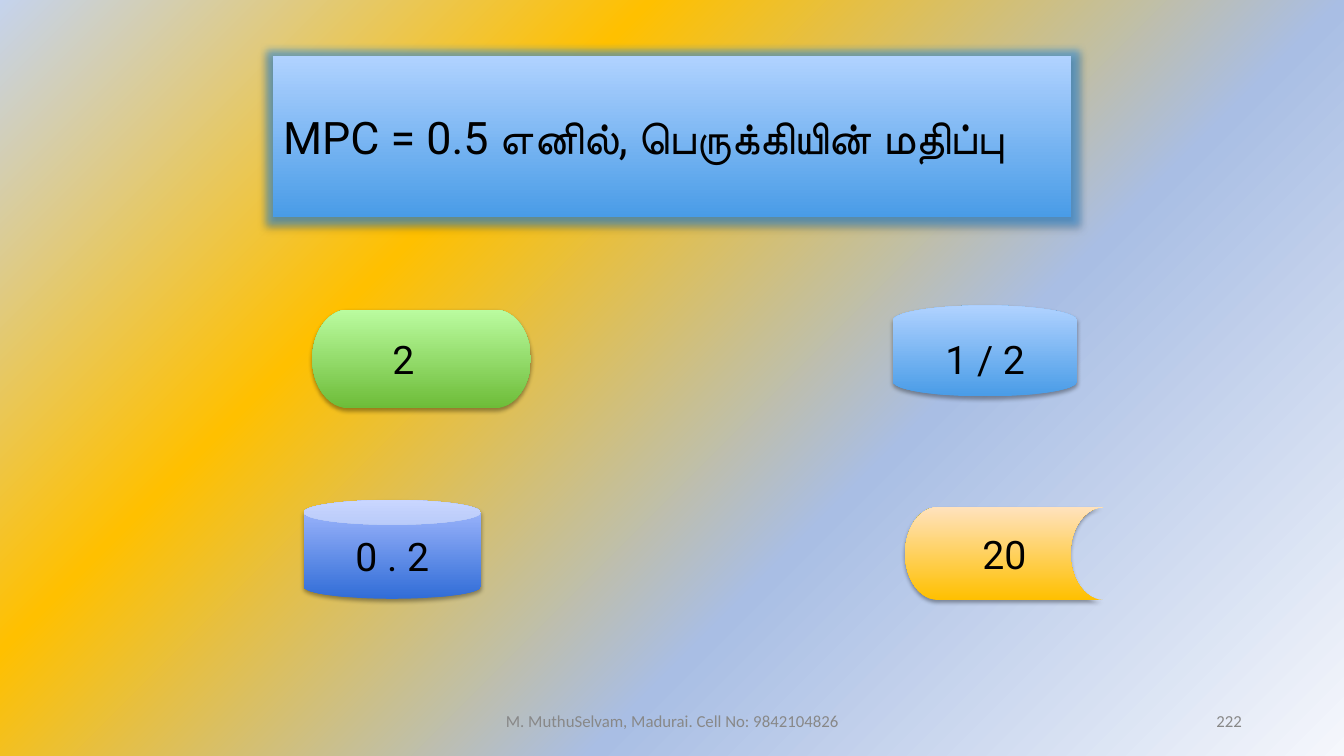
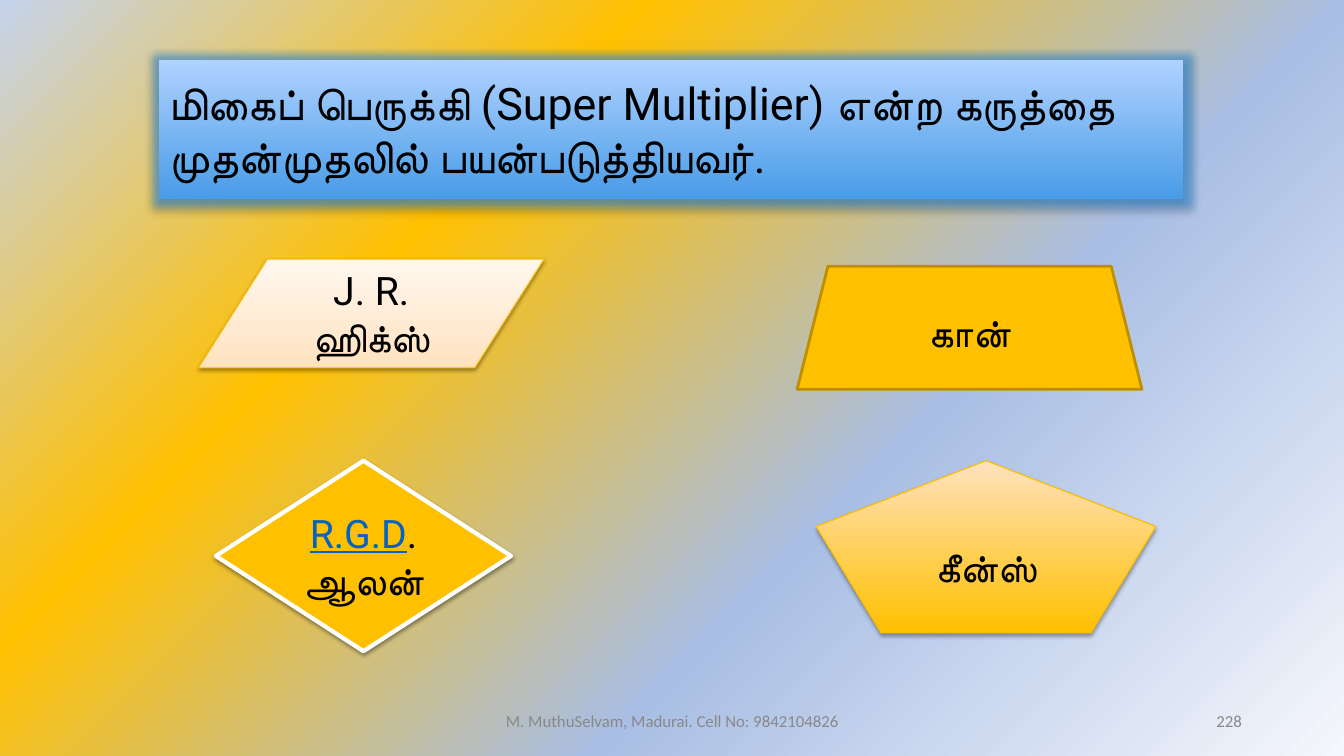
import pptx
import pptx.util
import pptx.dml.color
import pptx.enum.shapes
import pptx.enum.text
import pptx.oxml
import pptx.oxml.ns

Cm, Pt = pptx.util.Cm, pptx.util.Pt
SHAPE = pptx.enum.shapes.MSO_SHAPE
ALIGN = pptx.enum.text.PP_ALIGN
NAMESPACE = pptx.oxml.ns.nsdecls("a")
qn = pptx.oxml.ns.qn

COLORS = {
    "ink": "000000", "muted": "888888", "link": "0563C1", "white": "FFFFFF",
    "gold": "FFC000", "gold_edge": "F9BC00", "gold_dark": "BD8E00", "glow": "3E95DC",
}
GRADIENTS = {  # (position in percent, colour)
    "background": [(0, "F5F7FC"), (36, "A9BEE4"), (69, "FFC000"), (100, "C5D3ED")],
    "blue": [(0, "499CE7"), (100, "B0D2FF")],
    "green": [(0, "6DBC38"), (100, "BBFCA0")],
    "royal": [(0, "316DD7"), (100, "A6BBFF")],
    "amber": [(0, "FFC000"), (100, "FFE2BD")],
    "cream": [(0, "FFE2BD"), (35, "FFEAD1"), (100, "FFF7EE")],
}
UPWARD = '<a:lin ang="16200000" scaled="0"/>'
FROM_CORNER = '<a:path path="circle"><a:fillToRect l="100000" t="100000"/></a:path>'
SHADOWS = {  # opacity in percent, blur and distance in points
    "strong": (35, 3.1, 1.8),
    "soft": (38, 3.1, 1.6),
}
TEXT = {
    "question": {"size": Pt(32), "name": "Roboto"},
    "answer": {"size": Pt(28), "name": "Roboto"},
    "footer": {"size": Pt(12), "name": "Calibri"},
}
FOOTER = "M. MuthuSelvam, Madurai. Cell No: 9842104826"
FOOTER_BOX = (11.23, 17.65, 11.43, 1.02)
NUMBER_BOX = (23.93, 17.65, 7.62, 1.02)

# Boxes are left, top, width, height in centimetres; lines are colour and points.
SLIDES = [
    {
        "number": "222",
        "question": "MPC = 0.5 எனில், பெருக்கியின் மதிப்பு",
        "box": (6.88, 1.42, 20.12, 4.06),
        "answers": [
            {"text": "2", "kind": SHAPE.FLOWCHART_DIRECT_ACCESS_STORAGE,
             "box": (7.87, 7.8, 5.51, 2.49), "fill": "green", "shadow": "strong"},
            {"text": "1 / 2", "kind": SHAPE.FLOWCHART_MAGNETIC_DISK,
             "box": (22.5, 7.7, 4.65, 2.29), "fill": "blue", "shadow": "strong"},
            {"text": "0 . 2", "kind": SHAPE.CAN,
             "box": (7.65, 12.6, 4.47, 2.49), "fill": "royal", "shadow": "strong"},
            {"text": "20", "kind": SHAPE.FLOWCHART_STORED_DATA,
             "box": (22.81, 12.78, 5, 2.34), "fill": "amber", "shadow": "strong"},
        ],
    },
    {
        "number": "228",
        "question": "மிகைப் பெருக்கி (Super Multiplier) என்ற கருத்தை "
                    "முதன்முதலில் பயன்படுத்தியவர்.",
        "box": (4.01, 1.5, 25.81, 3.51),
        "answers": [
            {"text": "J. R. ஹிக்ஸ்", "kind": SHAPE.FLOWCHART_DATA,
             "box": (5, 6.53, 8.71, 2.74), "fill": "cream",
             "line": ("gold_edge", 0.75), "shadow": "soft"},
            {"text": "கான்", "kind": SHAPE.TRAPEZOID,
             "box": (20.09, 6.71, 8.69, 3.1), "fill": "gold", "line": ("gold_dark", 2)},
            {"linked": "R.G.D", "text": ". ஆலன்", "kind": SHAPE.DIAMOND,
             "box": (5.44, 11.61, 7.44, 4.8), "fill": "gold",
             "line": ("white", 3), "shadow": "soft"},
            {"text": "கீன்ஸ்", "kind": SHAPE.REGULAR_PENTAGON,
             "box": (20.57, 11.61, 8.56, 4.34), "fill": "amber",
             "line": ("gold_edge", 0.75), "shadow": "strong"},
        ],
    },
]


def rgb(name):
    return pptx.dml.color.RGBColor.from_string(COLORS[name])


def lengths(box):
    return [Cm(value) for value in box]


def apply_gradient(fill, properties, name, direction):
    """Fill the element that holds the shape or background properties."""
    fill.solid()
    stops = "".join(
        f'<a:gs pos="{position * 1000}"><a:srgbClr val="{color}"/></a:gs>'
        for position, color in GRADIENTS[name])
    gradient = pptx.oxml.parse_xml(
        f'<a:gradFill {NAMESPACE} rotWithShape="1"><a:gsLst>{stops}</a:gsLst>'
        f'{direction}</a:gradFill>')
    properties.replace(properties.find(qn("a:solidFill")), gradient)


def add_effect(shape, tag, attributes, color, opacity):
    effects = shape._element.spPr.find(qn("a:effectLst"))
    effects.append(pptx.oxml.parse_xml(
        f'<a:{tag} {NAMESPACE} {attributes}><a:srgbClr val="{COLORS[color]}">'
        f'<a:alpha val="{opacity * 1000}"/></a:srgbClr></a:{tag}>'))


def style_shape(shape, fill, line=None, shadow=None, glow=False):
    if fill in GRADIENTS:
        apply_gradient(shape.fill, shape._element.spPr, fill, UPWARD)
    else:
        shape.fill.solid()
        shape.fill.fore_color.rgb = rgb(fill)
    if line:
        shape.line.color.rgb, shape.line.width = rgb(line[0]), Pt(line[1])
    else:
        shape.line.fill.background()
    shape.shadow.inherit = False
    if glow:
        add_effect(shape, "glow", f'rad="{Pt(11)}"', "glow", 60)
    if shadow:
        opacity, blur, distance = SHADOWS[shadow]
        add_effect(shape, "outerShdw",
                   f'blurRad="{Pt(blur)}" dist="{Pt(distance)}" dir="5400000" '
                   'rotWithShape="0"', "ink", opacity)


def write_text(shape, text, style, alignment, color="ink", linked=""):
    frame = shape.text_frame
    frame.word_wrap = True
    frame.auto_size = pptx.enum.text.MSO_AUTO_SIZE.NONE
    frame.vertical_anchor = pptx.enum.text.MSO_ANCHOR.MIDDLE
    paragraph = frame.paragraphs[0]
    paragraph.alignment = alignment
    for content, run_color in ((linked, "link"), (text, color)):
        if content:
            run = paragraph.add_run()
            run.text = content
            for attribute, value in TEXT[style].items():
                setattr(run.font, attribute, value)
            run.font.color.rgb = rgb(run_color)
            run.font.underline = run_color == "link"


def place_question(title, text, box):
    for side, value in zip(("left", "top", "width", "height"), lengths(box)):
        setattr(title, side, value)
    title._element.spPr.append(pptx.oxml.parse_xml(
        f'<a:prstGeom {NAMESPACE} prst="horizontalScroll"><a:avLst/></a:prstGeom>'))
    style_shape(title, "blue", shadow="strong", glow=True)
    write_text(title, text, "question", ALIGN.LEFT)


def add_answer(slide, answer):
    shape = slide.shapes.add_shape(answer["kind"], *lengths(answer["box"]))
    style_shape(shape, answer["fill"], answer.get("line"), answer.get("shadow"))
    write_text(shape, answer["text"], "answer", ALIGN.CENTER,
               linked=answer.get("linked", ""))


def main():
    presentation = pptx.Presentation()
    presentation.slide_width, presentation.slide_height = Cm(33.87), Cm(19.05)
    master = presentation.slide_master
    fill = master.background.fill
    fill.solid()
    apply_gradient(fill, master._element.cSld.find(f".//{qn('p:bgPr')}"),
                   "background", FROM_CORNER)
    title_only = presentation.slide_layouts.get_by_name("Title Only")
    for content in SLIDES:
        slide = presentation.slides.add_slide(title_only)
        place_question(slide.shapes.title, content["question"], content["box"])
        for text, box, alignment in ((FOOTER, FOOTER_BOX, ALIGN.CENTER),
                                     (content["number"], NUMBER_BOX, ALIGN.RIGHT)):
            textbox = slide.shapes.add_textbox(*lengths(box))
            write_text(textbox, text, "footer", alignment, "muted")
        for answer in content["answers"]:
            add_answer(slide, answer)
    presentation.save("out.pptx")


if __name__ == "__main__":
    main()
